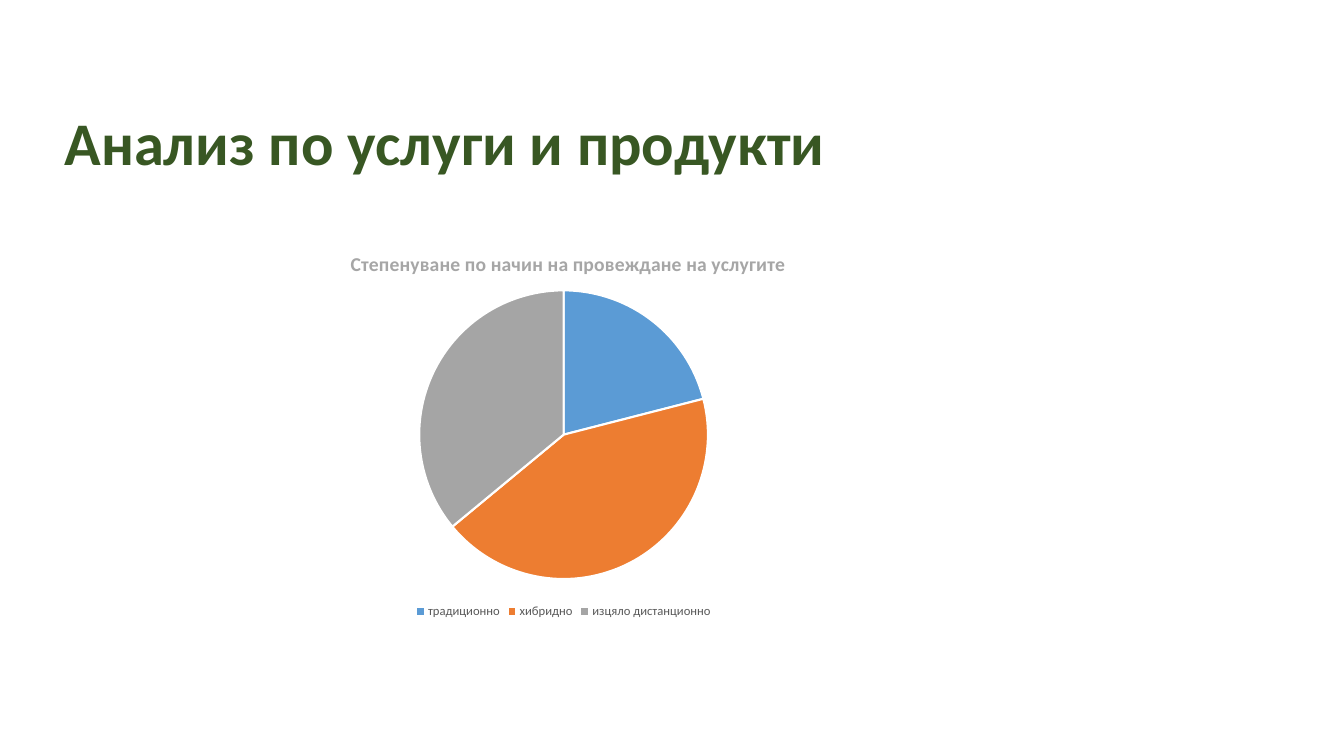
from lxml import etree
from pptx import Presentation
from pptx.chart.data import CategoryChartData
from pptx.dml.color import RGBColor
from pptx.enum.chart import XL_CHART_TYPE, XL_LEGEND_POSITION
from pptx.enum.text import MSO_ANCHOR, PP_ALIGN
from pptx.oxml.ns import qn
from pptx.util import Inches, Pt

PIE = XL_CHART_TYPE.PIE
BOTTOM = XL_LEGEND_POSITION.BOTTOM

TITLE = "Анализ по услуги и продукти"
CHART_TITLE = "Степенуване по начин на провеждане на услугите"
SERVICES = [  # category, value, colour name
    ("традиционно", 21, "blue"),
    ("хибридно", 43, "orange"),
    ("изцяло дистанционно", 36, "gray"),
]
COLORS = {
    "title": "385723", "chart_title": "A6A6A6", "legend": "595959",
    "blue": "5B9BD5", "orange": "ED7D31", "gray": "A5A5A5", "white": "FFFFFF",
}
FONTS = {
    "title": {"size": Pt(43.2), "bold": True},
    "chart_title": {"size": Pt(14), "bold": True},
    "legend": {"size": Pt(9), "bold": False},
}
TITLE_BOX = (0.54, 1, 11.13, 0.82)
CHART_BOX = (2.01, 2.25, 7.16, 3.93)
# Shares of the chart's width and height
PIE_AREA = {"x": 0.3, "y": 0.16, "w": 0.4, "h": 0.73}
CHART_TITLE_AREA = {"x": 0.2, "y": 0.05}


def color(name):
    return RGBColor.from_string(COLORS[name])


def style(font, name):
    for attr, value in {"name": "Calibri", **FONTS[name]}.items():
        setattr(font, attr, value)
    font.color.rgb = color(name)


def set_layout(layout, area, inner=False):
    """Give a chart part a fixed place within the chart."""
    for child in list(layout):
        layout.remove(child)
    manual = etree.SubElement(layout, qn("c:manualLayout"))
    values = {"layoutTarget": "inner"} if inner else {}
    values.update({"xMode": "edge", "yMode": "edge"}, **area)
    for tag, value in values.items():
        etree.SubElement(manual, qn(f"c:{tag}")).set("val", str(value))


prs = Presentation()
prs.slide_width, prs.slide_height = Inches(13.33), Inches(7.5)
slide = prs.slides.add_slide(prs.slide_layouts.get_by_name("Title Only"))

title = slide.shapes.title
title.left, title.top, title.width, title.height = map(Inches, TITLE_BOX)
tf = title.text_frame
tf.text = TITLE
tf.vertical_anchor = MSO_ANCHOR.BOTTOM
p = tf.paragraphs[0]
p.alignment = PP_ALIGN.LEFT
p.line_spacing = 0.9
style(p.runs[0].font, "title")

data = CategoryChartData()
data.categories = [name for name, _, _ in SERVICES]
data.add_series("Series 1", [value for _, value, _ in SERVICES])
chart = slide.shapes.add_chart(PIE, *map(Inches, CHART_BOX), data).chart
chart.font.name, chart.font.size = "Calibri", Pt(10)

chart.has_title = True
tf = chart.chart_title.text_frame
tf.text = CHART_TITLE
style(tf.paragraphs[0].runs[0].font, "chart_title")
chart.chart_title.include_in_layout = False

chart.has_legend = True
chart.legend.position = BOTTOM
chart.legend.include_in_layout = False
style(chart.legend.font, "legend")

plot = chart.plots[0]
plot.vary_by_categories = True
for i, (_, _, fill) in enumerate(SERVICES):
    fmt = plot.series[0].points[i].format
    fmt.fill.solid()
    fmt.fill.fore_color.rgb = color(fill)
    fmt.line.color.rgb = color("white")
    fmt.line.width = Pt(1.5)

chart_xml = chart.element.find(qn("c:chart"))
for tag, area, inner in (("c:title", CHART_TITLE_AREA, False),
                         ("c:plotArea", PIE_AREA, True)):
    part = chart_xml.find(qn(tag))
    layout = part.find(qn("c:layout"))
    if layout is None:
        layout = etree.Element(qn("c:layout"))
        part.insert(0 if inner else 1, layout)
    set_layout(layout, area, inner)

prs.save("out.pptx")
